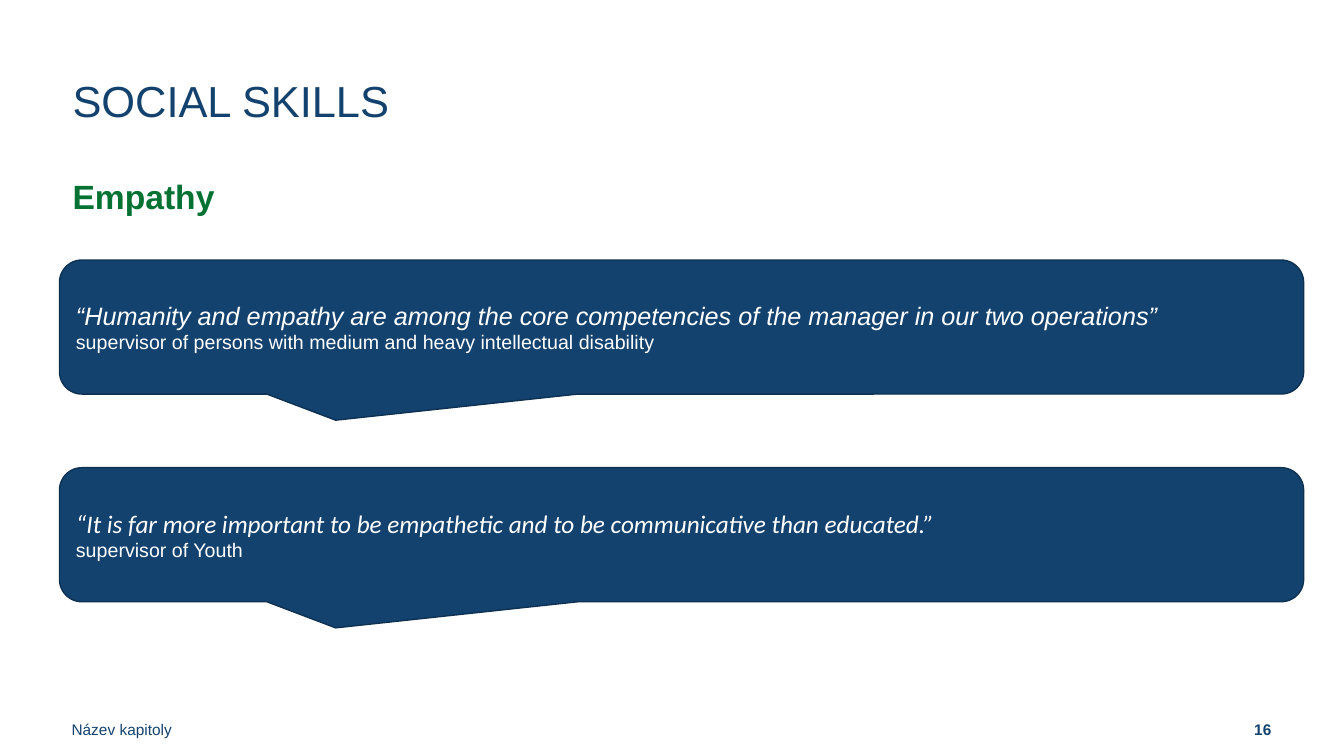
import pptx
import pptx.util
import pptx.dml.color
import pptx.enum.shapes
import pptx.enum.text
from pptx.util import Inches, Pt

COLORS = {"navy": "13426F", "edge": "0E3152", "green": "057233", "white": "FFFFFF"}
ALIGN = pptx.enum.text.PP_ALIGN
ANCHOR = pptx.enum.text.MSO_ANCHOR


def rgb(name):
    return pptx.dml.color.RGBColor.from_string(COLORS[name])


def style(para, text, size, color, face="Arial", bold=False, italic=False):
    """Fill a paragraph with left-aligned text in one font."""
    para.text = text
    para.alignment = ALIGN.LEFT
    font = para.font
    font.name, font.size = face, Pt(size)
    font.bold, font.italic = bold, italic
    font.color.rgb = rgb(color)


deck = pptx.Presentation()
deck.slide_width, deck.slide_height = Inches(13.33), Inches(7.5)
slide = deck.slides.add_slide(deck.slide_layouts[6])

# Footer, page number, title and heading: place, insets, anchor, text, font
labels = [
    ((0, 6.89, 4.5, 0.6), (0.71, 0, 0.16), ANCHOR.BOTTOM,
     "Název kapitoly", 11, "navy", False, Pt(13.3), ALIGN.LEFT),
    ((10.32, 6.89, 3, 0.6), (0, 0.71, 0.16), ANCHOR.BOTTOM,
     "16", 11, "navy", True, Pt(13.3), ALIGN.RIGHT),
    ((0.72, 0.73, 12.34, 1.12), (0, 0.1, 0.05), ANCHOR.TOP,
     "SOCIAL SKILLS", 31, "navy", False, Pt(34), ALIGN.LEFT),
    ((0.72, 1.67, 12.34, 2.24), (0, 0.1, 0.05), ANCHOR.TOP,
     "Empathy", 24, "green", True, 1.07, ALIGN.LEFT),
]
for place, insets, anchor, text, size, color, bold, line, align in labels:
    frame = slide.shapes.add_textbox(*map(Inches, place)).text_frame
    frame.word_wrap = True
    frame.vertical_anchor = anchor
    frame.margin_top = Inches(0.05)
    frame.margin_left, frame.margin_right, frame.margin_bottom = map(Inches, insets)
    para = frame.paragraphs[0]
    style(para, text, size, color, bold=bold)
    para.line_spacing = line
    para.alignment = align

# Quotes in speech bubbles
quotes = [
    (2.58, "Arial",
     "“Humanity and empathy are among the core competencies of the manager in our two operations”",
     "supervisor of persons with medium and heavy intellectual disability"),
    (4.64, "Calibri",
     "“It is far more important to be empathetic and to be communicative than educated.”",
     "supervisor of Youth"),
]
for top, face, quote, source in quotes:
    bubble = slide.shapes.add_shape(
        pptx.enum.shapes.MSO_SHAPE.ROUNDED_RECTANGULAR_CALLOUT,
        Inches(0.59), Inches(top), Inches(12.34), Inches(1.33))
    for index, value in enumerate((-0.278, 0.695, 0.167)):
        bubble.adjustments[index] = value
    bubble.shadow.inherit = False
    bubble.fill.solid()
    bubble.fill.fore_color.rgb = rgb("navy")
    bubble.line.color.rgb = rgb("edge")
    bubble.line.width = Pt(1)
    frame = bubble.text_frame
    frame.word_wrap = True
    frame.vertical_anchor = ANCHOR.MIDDLE
    style(frame.paragraphs[0], quote, 18, "white", face, italic=True)
    style(frame.add_paragraph(), source, 14, "white")

deck.save("out.pptx")
